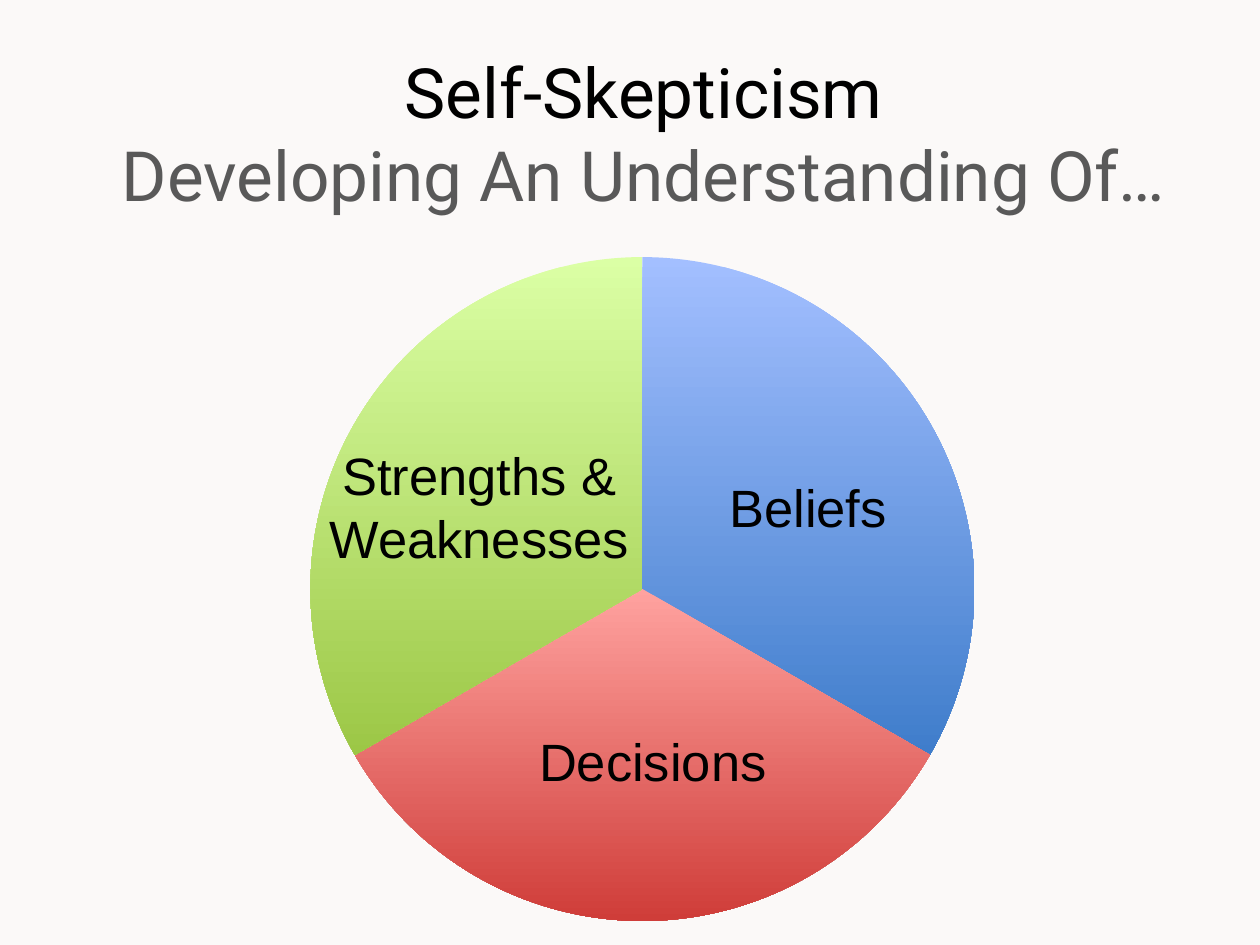
from lxml import etree
from pptx import Presentation
from pptx.chart.data import CategoryChartData
from pptx.dml.color import RGBColor
from pptx.enum.chart import XL_CHART_TYPE
from pptx.enum.text import MSO_ANCHOR, PP_ALIGN
from pptx.oxml.ns import qn
from pptx.util import Inches, Pt

PIE = XL_CHART_TYPE.PIE
MIDDLE = MSO_ANCHOR.MIDDLE
CENTER, LEFT = PP_ALIGN.CENTER, PP_ALIGN.LEFT
DOWNWARD = 270

THEME = {
    "background": "FBF9F8",
    "text": "000000",
    "subtitle": "595959",
    "slices": [("A3BFFF", "3F7DCB"), ("FFA29F", "CF3D39"), ("DBFFA5", "9CC746")],
    "title_font": "Roboto",
    "label_font": "Arial",
    "chart_font": "Calibri",
    "title_size": 39.6,
    "label_size": 30,
    "chart_size": 18,
}

presentation = Presentation()
presentation.slide_width, presentation.slide_height = Inches(10), Inches(7.5)
slide = presentation.slides.add_slide(presentation.slide_layouts[6])
slide.background.fill.solid()
slide.background.fill.fore_color.rgb = RGBColor.from_string(THEME["background"])


def place(left, top, width, height):
    """Turn percentages of the slide's size into lengths."""
    across, down = presentation.slide_width / 100, presentation.slide_height / 100
    return [int(share * unit) for share, unit in
            zip((left, top, width, height), (across, down, across, down))]


def add_run(paragraph, text, font_name, size, color):
    run = paragraph.add_run()
    run.text = text
    run.font.name = font_name
    run.font.size = Pt(size)
    run.font.color.rgb = RGBColor.from_string(color)


# Title
title = slide.shapes.add_textbox(*place(5, 0.8, 92.2, 26.5)).text_frame
title.word_wrap = True
title.vertical_anchor = MIDDLE
heading = title.paragraphs[0]
heading.alignment = CENTER
add_run(heading, "Self-Skepticism", THEME["title_font"], THEME["title_size"], THEME["text"])
heading.add_line_break()
add_run(heading, "Developing An Understanding Of…",
        THEME["title_font"], THEME["title_size"], THEME["subtitle"])

# Pie of three equal slices
chart_data = CategoryChartData()
chart_data.categories = ["1", "2", "3"]
chart_data.add_series("Series 1", [33] * 3)
chart = slide.shapes.add_chart(PIE, *place(11.3, 27.2, 73.1, 70.27), chart_data).chart
chart.has_legend = False
chart.has_title = False
chart.font.name = THEME["chart_font"]
chart.font.size = Pt(THEME["chart_size"])
chart.font.color.rgb = RGBColor.from_string(THEME["text"])
pie = chart.plots[0]
pie.vary_by_categories = True
for index, colors in enumerate(THEME["slices"]):
    slice_format = pie.series[0].points[index].format
    slice_format.line.fill.background()
    slice_format.fill.gradient()
    slice_format.fill.gradient_angle = DOWNWARD
    for stop, color in zip(slice_format.fill.gradient_stops, colors):
        stop.color.rgb = RGBColor.from_string(color)

plot_area = chart._chartSpace.chart.plotArea
for old_layout in plot_area.findall(qn("c:layout")):
    plot_area.remove(old_layout)
layout = etree.Element(qn("c:layout"))
plot_area.insert(0, layout)
manual = etree.SubElement(layout, qn("c:manualLayout"))
for tag, value in [("layoutTarget", "inner"), ("xMode", "edge"), ("yMode", "edge"),
                   ("x", "0.174"), ("y", "0"), ("w", "0.738"), ("h", "1")]:
    etree.SubElement(manual, qn(f"c:{tag}"), val=value)

# Slice labels
labels = [
    (["Strengths &", "Weaknesses"], CENTER, (21.8, 46.27, 32.5, 14.8)),
    (["Decisions"], LEFT, (41.8, 76.53, 23.3, 8.13)),
    (["Beliefs"], LEFT, (56.9, 49.6, 32.5, 8.13)),
]
for lines, alignment, box in labels:
    label = slide.shapes.add_textbox(*place(*box)).text_frame
    label.word_wrap = True
    for number, line in enumerate(lines):
        paragraph = label.add_paragraph() if number else label.paragraphs[0]
        paragraph.alignment = alignment
        add_run(paragraph, line, THEME["label_font"], THEME["label_size"], THEME["text"])

presentation.save("out.pptx")
